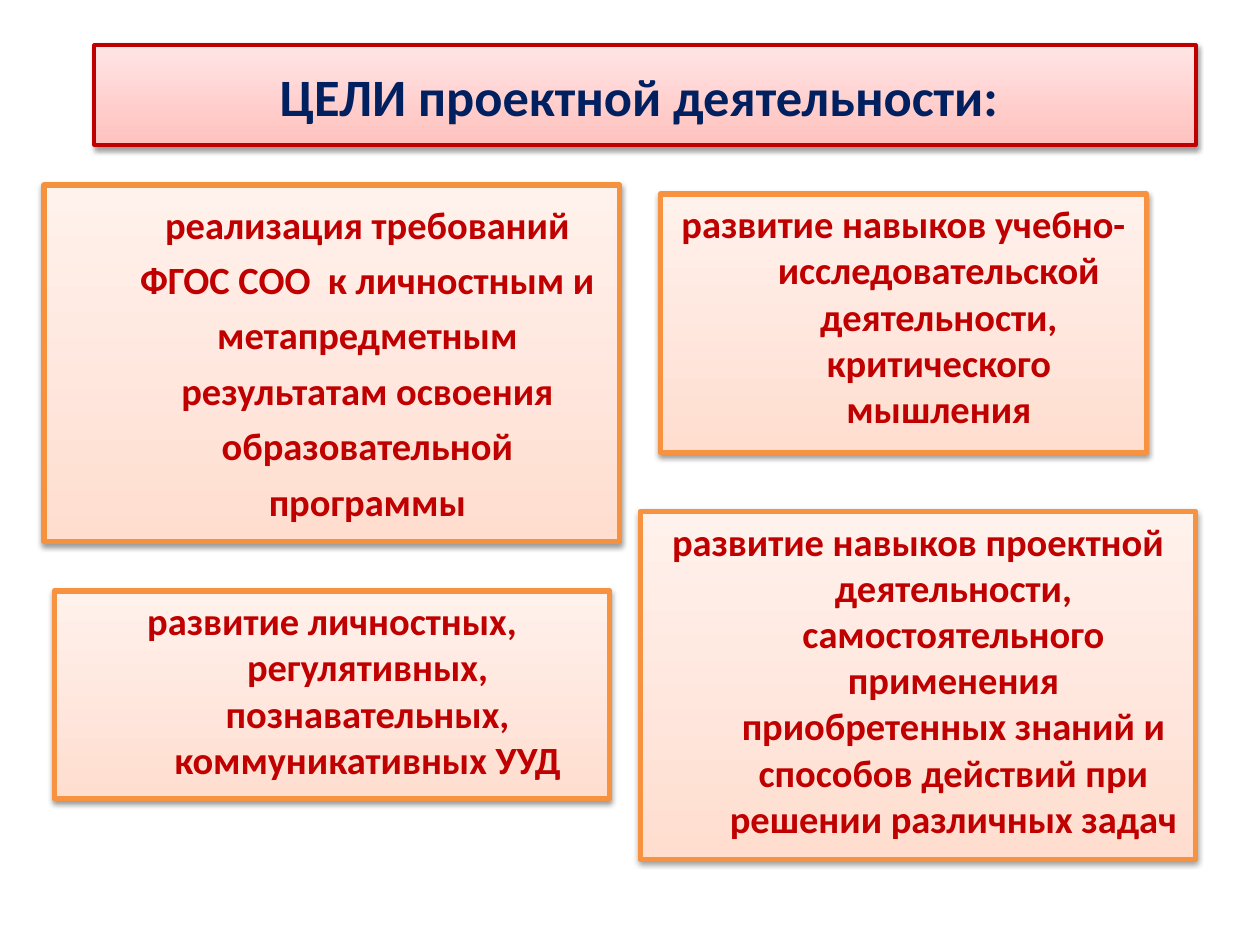
import pptx
import pptx.dml.color
import pptx.enum.shapes
import pptx.enum.text
import pptx.oxml
import pptx.oxml.ns
import pptx.util

Pt = pptx.util.Pt
INDENT = Pt(40.5)

# box (left, top, width, height), first-line indent, line spacing, line colour, text
GOALS = [
    ((25.2, 105.8, 329, 203.8), 0, 1.2, "F59240",
     "реализация требований ФГОС СОО  к личностным и метапредметным "
     "результатам освоения образовательной программы"),
    ((31, 337.7, 317.5, 118.8), -INDENT, 1, "F69240",
     "развитие личностных, регулятивных, познавательных, коммуникативных УУД"),
    ((377.3, 110.9, 277.9, 147.6), -INDENT, 1, "F69240",
     "развитие навыков учебно-исследовательской деятельности, "
     "критического мышления"),
    ((365.8, 292.3, 317.5, 198.7), -INDENT, 1, "F69240",
     "развитие навыков проектной деятельности, самостоятельного применения "
     "приобретенных знаний и способов действий при решении различных задач"),
]


def color(value):
    return pptx.dml.color.RGBColor.from_string(value)


def add_shadow(sp):
    sp.shadow.inherit = False
    effects = sp._element.spPr.find(pptx.oxml.ns.qn("a:effectLst"))
    effects.append(pptx.oxml.parse_xml(
        f'<a:outerShdw {pptx.oxml.ns.nsdecls("a")} blurRad="{Pt(3.15)}" '
        f'dist="{Pt(1.57)}" dir="5400000" rotWithShape="0">'
        '<a:srgbClr val="000000"><a:alpha val="38000"/></a:srgbClr>'
        '</a:outerShdw>'))


def add_panel(s, box, stops, line, width, text, size, text_color):
    """Gradient rectangle with one centred bold paragraph."""
    sp = s.shapes.add_shape(pptx.enum.shapes.MSO_SHAPE.RECTANGLE,
                            *(Pt(v) for v in box))
    sp.fill.gradient()
    sp.fill.gradient_angle = 90
    for stop, value in zip(sp.fill.gradient_stops, stops):
        stop.color.rgb = color(value)
    sp.line.color.rgb = color(line)
    sp.line.width = Pt(width)
    add_shadow(sp)

    tf = sp.text_frame
    tf.word_wrap = True
    p = tf.paragraphs[0]
    p.text = text
    p.alignment = pptx.enum.text.PP_ALIGN.CENTER
    p.font.name = "Calibri"
    p.font.size = Pt(size)
    p.font.bold = True
    p.font.color.rgb = color(text_color)
    return tf


def add_title(s, box):
    tf = add_panel(s, box, ("FFC1BE", "FFE5E5"), "C00000", 2.25,
                   "ЦЕЛИ проектной деятельности: ", 30, "002060")
    tf.vertical_anchor = pptx.enum.text.MSO_ANCHOR.MIDDLE


def add_goal(s, box, first_indent, spacing, line, text):
    tf = add_panel(s, box, ("FFDED0", "FFF1EC"), line, 3, text, 22, "C00000")
    tf.vertical_anchor = pptx.enum.text.MSO_ANCHOR.TOP
    p = tf.paragraphs[0]
    p.line_spacing = spacing
    pPr = p._p.get_or_add_pPr()
    pPr.set("marL", str(int(INDENT)))
    pPr.set("indent", str(int(first_indent)))


def main():
    prs = pptx.Presentation()
    prs.slide_width, prs.slide_height = Pt(720), Pt(540)
    s = prs.slides.add_slide(prs.slide_layouts[6])

    # Goals, with the title after the first
    add_goal(s, *GOALS[0])
    add_title(s, (54, 25.9, 629.3, 56.9))
    for goal in GOALS[1:]:
        add_goal(s, *goal)

    prs.save("out.pptx")


if __name__ == "__main__":
    main()
